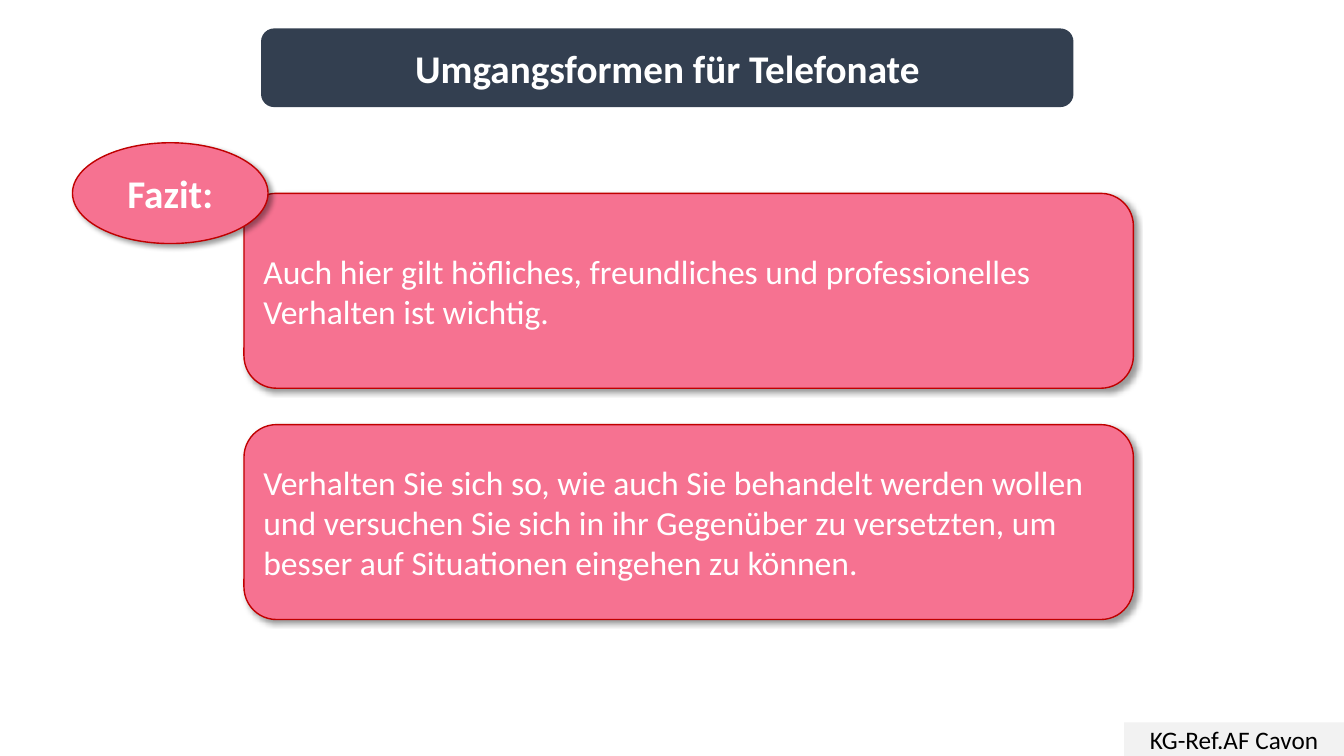
"""Build the closing slide on telephone manners."""
from dataclasses import dataclass

from lxml.etree import SubElement
from pptx import Presentation
from pptx.dml.color import RGBColor
from pptx.enum.shapes import MSO_SHAPE
from pptx.enum.text import MSO_ANCHOR, PP_ALIGN
from pptx.oxml.ns import qn
from pptx.shapes.autoshape import Shape
from pptx.slide import Slide
from pptx.util import Pt

FONT = "Calibri"
WHITE = "FFFFFF"
PINK = "F67291"
RED = "C00000"
BOX_LEFT, BOX_TOP, BOX_WIDTH, BOX_HEIGHT = 174.3, 138.1, 635.3, 139.2
BOX_STEP = 165.2


@dataclass(frozen=True)
class Panel:
    kind: MSO_SHAPE
    left: float
    top: float
    width: float
    height: float
    text: str
    size: float
    fill: str
    color: str = WHITE
    bold: bool = False
    alignment: PP_ALIGN = PP_ALIGN.CENTER
    outline: str | None = None


def conclusion(row: int, text: str) -> Panel:
    return Panel(MSO_SHAPE.ROUNDED_RECTANGLE, BOX_LEFT, BOX_TOP + row * BOX_STEP,
                 BOX_WIDTH, BOX_HEIGHT, text, 24, PINK,
                 alignment=PP_ALIGN.LEFT, outline=RED)


PANELS = [
    Panel(MSO_SHAPE.RECTANGLE, 802.9, 516, 157.1, 24,
          "KG-Ref.AF Cavon", 18, "F2F2F2", color="000000"),
    conclusion(0, "Auch hier gilt höfliches, freundliches und professionelles "
                  "Verhalten ist wichtig."),
    Panel(MSO_SHAPE.OVAL, 51.8, 102, 139.7, 72, "Fazit:", 28, PINK,
          bold=True, outline=RED),
    conclusion(1, "Verhalten Sie sich so, wie auch Sie behandelt werden wollen "
                  "und versuchen Sie sich in ihr Gegenüber zu versetzten, um "
                  "besser auf Situationen eingehen zu können."),
    Panel(MSO_SHAPE.ROUNDED_RECTANGLE, 186.5, 20.3, 580.3, 56.2,
          "Umgangsformen für Telefonate", 28, "333F50", bold=True),
]


def rgb(value: str) -> RGBColor:
    return RGBColor.from_string(value)


def add_drop_shadow(shape: Shape) -> None:
    effects = shape._element.spPr.find(qn("a:effectLst"))
    shadow = SubElement(effects, qn("a:outerShdw"), blurRad=str(Pt(4)),
                        dist=str(Pt(3)), dir=str(45 * 60000),
                        algn="tl", rotWithShape="0")
    color = SubElement(shadow, qn("a:srgbClr"), val="000000")
    SubElement(color, qn("a:alpha"), val="40000")


def add_panel(slide: Slide, panel: Panel) -> None:
    shape = slide.shapes.add_shape(panel.kind, Pt(panel.left), Pt(panel.top),
                                   Pt(panel.width), Pt(panel.height))
    shape.shadow.inherit = False
    shape.fill.solid()
    shape.fill.fore_color.rgb = rgb(panel.fill)
    if panel.outline:
        shape.line.color.rgb = rgb(panel.outline)
        shape.line.width = Pt(1)
        add_drop_shadow(shape)
    else:
        shape.line.fill.background()

    frame = shape.text_frame
    frame.word_wrap = True
    frame.vertical_anchor = MSO_ANCHOR.MIDDLE
    paragraph = frame.paragraphs[0]
    paragraph.alignment = panel.alignment
    run = paragraph.add_run()
    run.text = panel.text
    run.font.name = FONT
    run.font.size = Pt(panel.size)
    run.font.bold = panel.bold
    run.font.color.rgb = rgb(panel.color)


def main() -> None:
    presentation = Presentation()
    presentation.slide_width = Pt(960)
    presentation.slide_height = Pt(540)
    slide = presentation.slides.add_slide(presentation.slide_layouts[6])
    for panel in PANELS:
        add_panel(slide, panel)
    presentation.save("out.pptx")


if __name__ == "__main__":
    main()
